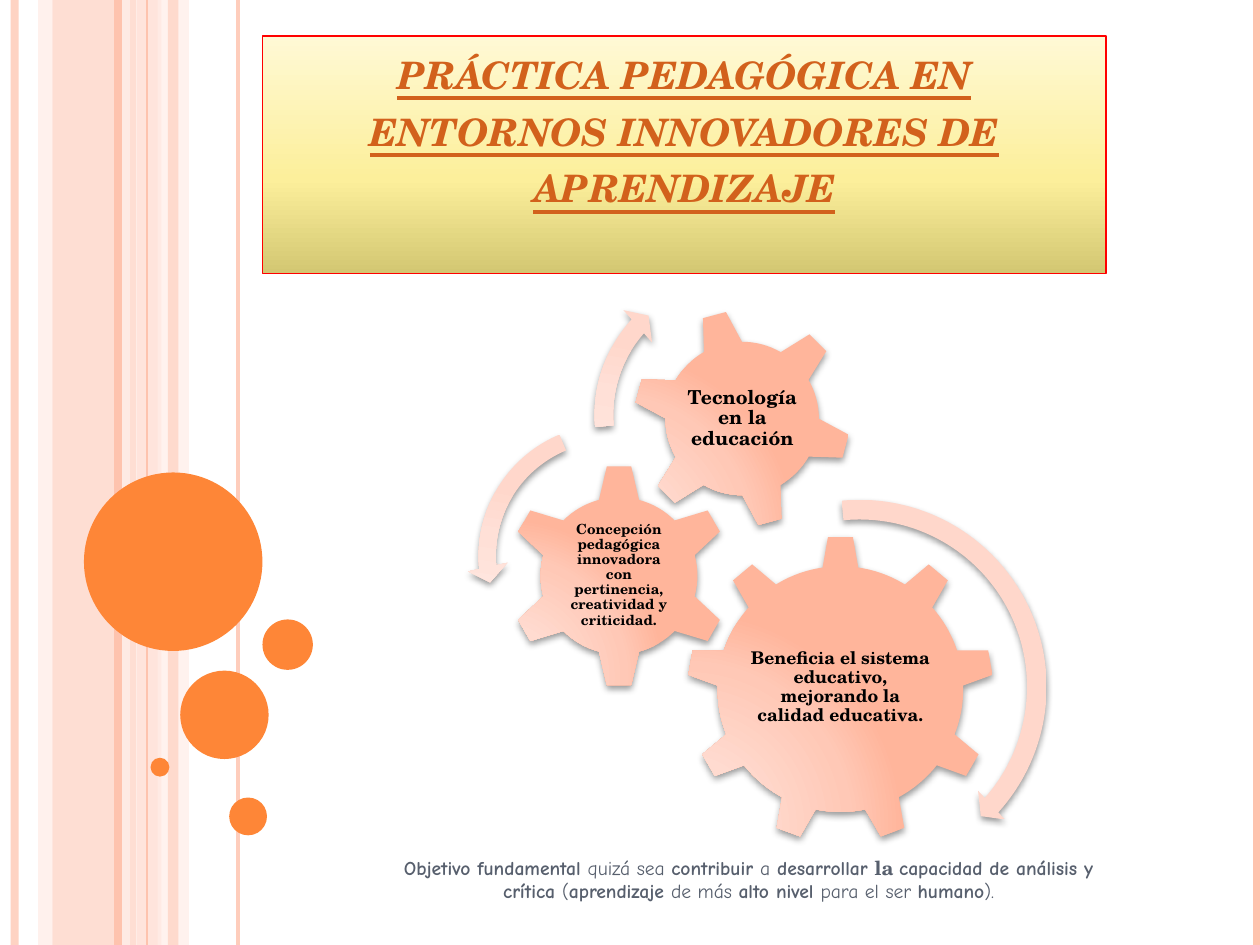
from lxml import etree
from pptx import Presentation
from pptx.dml.color import RGBColor
from pptx.enum.shapes import MSO_CONNECTOR, MSO_SHAPE
from pptx.enum.text import MSO_ANCHOR, MSO_AUTO_SIZE, PP_ALIGN
from pptx.oxml.ns import qn
from pptx.util import Pt

RECT, OVAL = MSO_SHAPE.RECTANGLE, MSO_SHAPE.OVAL
GEAR_6, GEAR_9 = MSO_SHAPE.GEAR_6, MSO_SHAPE.GEAR_9
ARROW, LEFT_ARROW = MSO_SHAPE.CIRCULAR_ARROW, MSO_SHAPE.LEFT_CIRCULAR_ARROW
STRAIGHT = MSO_CONNECTOR.STRAIGHT
CENTER = PP_ALIGN.CENTER
TOP, MIDDLE = MSO_ANCHOR.TOP, MSO_ANCHOR.MIDDLE
NO_AUTOFIT = MSO_AUTO_SIZE.NONE

SALMON = RGBColor(0xFE, 0xC3, 0xAE)
PINK = RGBColor(0xFF, 0xD9, 0xCE)
PALE = RGBColor(0xFF, 0xED, 0xE8)
ORANGE = RGBColor(0xFE, 0x86, 0x37)
RED = RGBColor(0xFF, 0x00, 0x00)
RUST = RGBColor(0xD2, 0x61, 0x1C)
SLATE = RGBColor(0x57, 0x5F, 0x6D)
BLACK = RGBColor(0x00, 0x00, 0x00)

GOLD_STOPS = [(0, RGBColor(0xD3, 0xC7, 0x72)), (40, RGBColor(0xFC, 0xEF, 0x9B)),
              (100, RGBColor(0xFF, 0xF9, 0xD5))]
GEAR_STOPS = [(0, RGBColor(0xFF, 0xDE, 0xD5)), (30, RGBColor(0xFF, 0xDB, 0xD0)),
              (75, RGBColor(0xFF, 0xC8, 0xB6)), (100, RGBColor(0xFF, 0xB5, 0x9B))]
ARROW_STOPS = [(0, RGBColor(0xFF, 0xEC, 0xE7)), (30, RGBColor(0xFF, 0xEA, 0xE4)),
               (75, RGBColor(0xFF, 0xE0, 0xD7)), (100, RGBColor(0xFF, 0xD7, 0xCB))]
SERIF, CASUAL = "TeX Gyre Schola", "Comic Neue"
HEIGHT = 540


def set_gradient(shape, stops, upward=False):
    """Fill with the stops, bottom to top or else radiating from the lower left."""
    shape.fill.gradient()
    gradient = shape.fill._xPr.find(qn("a:gradFill"))
    for child in list(gradient):
        gradient.remove(child)
    stop_list = etree.SubElement(gradient, qn("a:gsLst"))
    for percent, color in stops:
        stop = etree.SubElement(stop_list, qn("a:gs"), pos=str(percent * 1000))
        etree.SubElement(stop, qn("a:srgbClr"), val=str(color))
    if upward:
        etree.SubElement(gradient, qn("a:lin"), ang="16200000", scaled="0")
    else:
        radial = etree.SubElement(gradient, qn("a:path"), path="circle")
        etree.SubElement(radial, qn("a:fillToRect"),
                         l="5000", t="100000", r="120000", b="10000")


def set_opacity(shape, percent):
    color = next(shape._element.spPr.iter(qn("a:srgbClr")))
    etree.SubElement(color, qn("a:alpha"), val=str(percent * 1000))


prs = Presentation()
prs.slide_width, prs.slide_height = Pt(720), Pt(HEIGHT)
slide = prs.slides.add_slide(prs.slide_layouts[0])

# Vertical bands: left, width, colour, opacity
for left, width, color, opacity in [
    (30, 48, SALMON, 54),
    (21.75, 8.25, PINK, 36),
    (78, 14.25, PINK, 70),
    (90, 18, PALE, 71),
    (96, 6, SALMON, 51),
]:
    band = slide.shapes.add_shape(RECT, Pt(left), 0, Pt(width), Pt(HEIGHT))
    band.fill.solid()
    band.fill.fore_color.rgb = color
    set_opacity(band, opacity)
    band.line.fill.background()
    band.shadow.inherit = False

# Vertical stripes: x, width, colour, opacity
for x, width, color, opacity in [
    (8.4, 4.5, SALMON, 73),
    (72, 4.5, PALE, 83),
    (67.25, 4.5, SALMON, 100),
    (136, 2.25, SALMON, 82),
    (84, 0.75, SALMON, 100),
    (718, 4.5, SALMON, 100),
]:
    stripe = slide.shapes.add_connector(STRAIGHT, Pt(x), 0, Pt(x), Pt(HEIGHT))
    stripe.line.color.rgb = color
    stripe.line.width = Pt(width)
    set_opacity(stripe, opacity)
    etree.SubElement(stripe._element.spPr, qn("a:effectLst"))

for left, top, size in [(48, 270, 102), (103, 383.25, 50.5), (86, 433, 10.8),
                        (131, 455.75, 21.6), (150, 354, 28.8)]:
    bubble = slide.shapes.add_shape(OVAL, Pt(left), Pt(top), Pt(size), Pt(size))
    bubble.fill.solid()
    bubble.fill.fore_color.rgb = ORANGE
    bubble.line.fill.background()
    bubble.shadow.inherit = False

title = slide.shapes.title
title.left, title.top, title.width, title.height = Pt(150), Pt(20.5), Pt(482), Pt(136)
set_gradient(title, GOLD_STOPS, upward=True)
title.line.color.rgb = RED
title.line.width = Pt(0.75)
title.text_frame.text = "práctica pedagógica en entornos innovadores de aprendizaje"
title.text_frame.auto_size = NO_AUTOFIT
title.text_frame.vertical_anchor = TOP
heading = title.text_frame.paragraphs[0]
heading.alignment = CENTER
heading.font.name, heading.font.size = SERIF, Pt(27)
heading.font.bold = heading.font.italic = heading.font.underline = True
heading.font.color.rgb = RUST
heading.runs[0].font._element.set("cap", "small")

diagram = slide.shapes.add_group_shape()

# Gears: preset, left, top, size, rotation; label left, top, width, height, inset, size
for preset, left, top, size, rotation, label_box, inset, font_size, label in [
    (GEAR_9, 392.5, 306, 175.5, 0, (427.7, 347.5, 105, 91), 0.9, 10,
     "Beneficia el sistema educativo, mejorando la calidad educativa."),
    (GEAR_6, 289.75, 265, 128, 0, (322, 297, 63.5, 63.5), 0.9, 8,
     "Concepción pedagógica innovadora con pertinencia, creatividad y criticidad."),
    (GEAR_6, 361.5, 176.5, 125.25, 345, (389, 204, 70.5, 70.5), 1.1, 11,
     "Tecnología en la educación"),
]:
    gear = diagram.shapes.add_shape(preset, Pt(left), Pt(top), Pt(size), Pt(size))
    gear.rotation = rotation
    set_gradient(gear, GEAR_STOPS)

    text_box = diagram.shapes.add_textbox(*map(Pt, label_box))
    frame = text_box.text_frame
    frame.text = label
    frame.word_wrap = True
    frame.vertical_anchor = MIDDLE
    frame.margin_left = frame.margin_right = Pt(inset)
    frame.margin_top = frame.margin_bottom = Pt(inset)
    caption = frame.paragraphs[0]
    caption.alignment = CENTER
    caption.line_spacing = 0.9
    caption.font.name, caption.font.size = SERIF, Pt(font_size)
    caption.font.bold = True
    caption.font.color.rgb = BLACK

for preset, left, top, size, adjustments in [
    (ARROW, 378.75, 280, 225, (0.05, 2.99, 25.13, 158.68, 0.05)),
    (LEFT_ARROW, 267, 236, 163.5, (0.06, 4.3, 104.89, 148.38, 0.07)),
    (ARROW, 332.75, 149, 176.25, (0.06, 3.94, 133.14, 105.08, 0.07)),
]:
    turn = diagram.shapes.add_shape(preset, Pt(left), Pt(top), Pt(size), Pt(size))
    for index, value in enumerate(adjustments):
        turn.adjustments[index] = value
    set_gradient(turn, ARROW_STOPS)

for part in diagram.shapes:
    if not part._element.spPr.findall(qn("a:gradFill")):
        continue
    part.line.fill.background()
    part.shadow.inherit = False
    effects = part._element.spPr.find(qn("a:effectLst"))
    shadow = etree.SubElement(effects, qn("a:outerShdw"), blurRad=str(Pt(4)),
                              dist=str(Pt(2)), dir="5400000", rotWithShape="0")
    shade = etree.SubElement(shadow, qn("a:srgbClr"), val=str(BLACK))
    etree.SubElement(shade, qn("a:alpha"), val="40000")

objective = slide.placeholders[1]
objective.left, objective.top = Pt(212.5), Pt(485.25)
objective.width, objective.height = Pt(430.5), Pt(34.5)
objective.text_frame.auto_size = NO_AUTOFIT
statement = objective.text_frame.paragraphs[0]
statement.alignment = CENTER
statement.space_before = Pt(6)
statement.font.size = Pt(11.2)
statement.font.color.rgb = SLATE
for words, bold, font_name in [
    ("Objetivo fundamental ", True, CASUAL),
    ("quizá sea ", False, CASUAL),
    ("contribuir ", True, CASUAL),
    ("a", False, CASUAL),
    (" desarrollar ", True, CASUAL),
    ("la ", True, SERIF),
    ("capacidad de análisis y crítica ", True, CASUAL),
    ("(", False, CASUAL),
    ("aprendizaje ", True, CASUAL),
    ("de más ", False, CASUAL),
    ("alto nivel ", True, CASUAL),
    ("para el ser ", False, CASUAL),
    ("humano", True, CASUAL),
    (").", False, CASUAL),
]:
    run = statement.add_run()
    run.text = words
    run.font.bold = bold
    run.font.name = font_name

prs.save("out.pptx")
